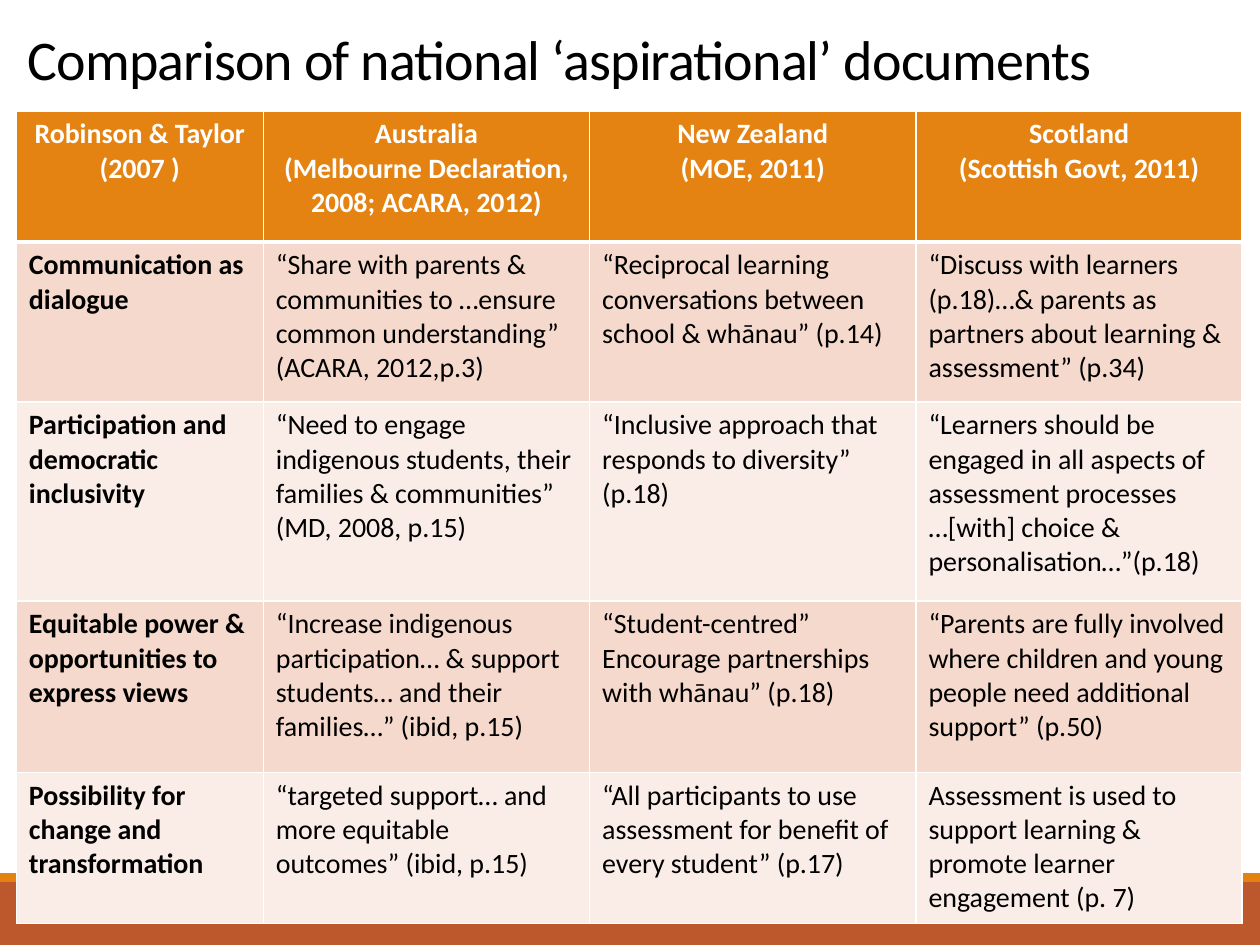
"""Build a slide that compares national assessment documents in a table."""
from lxml import etree
from pptx import Presentation
from pptx.dml.color import RGBColor
from pptx.enum.shapes import MSO_SHAPE
from pptx.enum.text import MSO_ANCHOR, PP_ALIGN
from pptx.oxml.ns import qn
from pptx.util import Inches, Pt

RECT = MSO_SHAPE.RECTANGLE
BOTTOM = MSO_ANCHOR.BOTTOM
CENTER, LEFT = PP_ALIGN.CENTER, PP_ALIGN.LEFT
WHITE = RGBColor(0xFF, 0xFF, 0xFF)
BLACK = RGBColor(0x00, 0x00, 0x00)
ORANGE = RGBColor(0xE4, 0x83, 0x12)
RUST = RGBColor(0xBD, 0x58, 0x2C)
BANDS = (RGBColor(0xFA, 0xED, 0xE7), RGBColor(0xF5, 0xD9, 0xCC))
FONT = "Calibri"

TITLE = "Comparison of national ‘aspirational’ documents"
ROWS = [
    ("Robinson & Taylor (2007 )",
     "Australia\n(Melbourne Declaration, 2008; ACARA, 2012)",
     "New Zealand\n(MOE, 2011)",
     "Scotland\n(Scottish Govt, 2011)"),
    ("Communication as dialogue",
     "“Share with parents & communities to …ensure common understanding” (ACARA, 2012,p.3)",
     "“Reciprocal learning conversations between school & whānau” (p.14)",
     "“Discuss with learners (p.18)…& parents as partners about learning & assessment” (p.34)"),
    ("Participation and democratic inclusivity",
     "“Need to engage indigenous students, their families & communities” (MD, 2008, p.15)",
     "“Inclusive approach that responds to diversity” (p.18)",
     "“Learners should be engaged in all aspects of assessment processes\n"
     "…[with] choice & personalisation…”(p.18)"),
    ("Equitable power & opportunities to express views",
     "“Increase indigenous participation… & support students… and their families…” (ibid, p.15)",
     "“Student-centred”\nEncourage partnerships with whānau” (p.18)",
     "“Parents are fully involved where children and young people need additional support” (p.50)"),
    ("Possibility for change and transformation",
     "“targeted support… and more equitable outcomes” (ibid, p.15)",
     "“All participants to use assessment for benefit of every student” (p.17)",
     "Assessment is used to support learning & promote learner engagement (p. 7)"),
]
WIDTHS = (1.96, 2.59, 2.59, 2.59)
HEIGHTS = (1.04, 1.27, 1.58, 1.36, 1.2)
STRIPES = ((7, 0.5, RUST), (6.93, 0.07, ORANGE))


def add_stripe(slide, top, height, color):
    bar = slide.shapes.add_shape(RECT, 0, Inches(top), Inches(10), Inches(height))
    bar.shadow.inherit = False
    bar.fill.solid()
    bar.fill.fore_color.rgb = color
    bar.line.fill.background()


def add_title(slide):
    box = slide.shapes.add_textbox(Inches(0.12), Inches(0.22), Inches(9.41), Inches(0.56))
    frame = box.text_frame
    frame.word_wrap = True
    frame.vertical_anchor = BOTTOM
    frame.text = TITLE
    para = frame.paragraphs[0]
    para.line_spacing = 0.85
    run = para.runs[0]
    style_font(run.font, 32, BLACK, False)
    run._r.get_or_add_rPr().set("spc", "-50")


def style_font(font, size, color, bold):
    font.name = FONT
    font.size = Pt(size)
    font.color.rgb = color
    font.bold = bold


def set_edge(cell, side, width):
    line = etree.SubElement(cell._tc.get_or_add_tcPr(), qn(f"a:ln{side}"), w=str(Pt(width)))
    fill = etree.SubElement(line, qn("a:solidFill"))
    etree.SubElement(fill, qn("a:srgbClr"), val=str(WHITE))


def fill_cell(cell, text, row, col):
    head = row == 0
    for side, thick in (("L", False), ("R", False), ("T", row == 1), ("B", head)):
        set_edge(cell, side, 3 if thick else 1)
    cell.fill.solid()
    cell.fill.fore_color.rgb = ORANGE if head else BANDS[row % 2]
    cell.text_frame.text = text
    for para in cell.text_frame.paragraphs:
        para.alignment = CENTER if head else LEFT
        for run in para.runs:
            style_font(run.font, 16, WHITE if head else BLACK, head or col == 0)


def add_grid(slide):
    frame = slide.shapes.add_table(
        len(ROWS), len(WIDTHS), Inches(0.13), Inches(0.88),
        Inches(sum(WIDTHS)), Inches(sum(HEIGHTS)))
    table = frame.table
    for col, width in zip(table.columns, WIDTHS):
        col.width = Inches(width)
    for row, height in zip(table.rows, HEIGHTS):
        row.height = Inches(height)
    for row, texts in enumerate(ROWS):
        for col, text in enumerate(texts):
            fill_cell(table.cell(row, col), text, row, col)


def main():
    deck = Presentation()
    deck.slide_width, deck.slide_height = Inches(10), Inches(7.5)
    slide = deck.slides.add_slide(deck.slide_layouts[6])
    for stripe in STRIPES:
        add_stripe(slide, *stripe)
    add_title(slide)
    add_grid(slide)
    deck.save("out.pptx")


if __name__ == "__main__":
    main()
